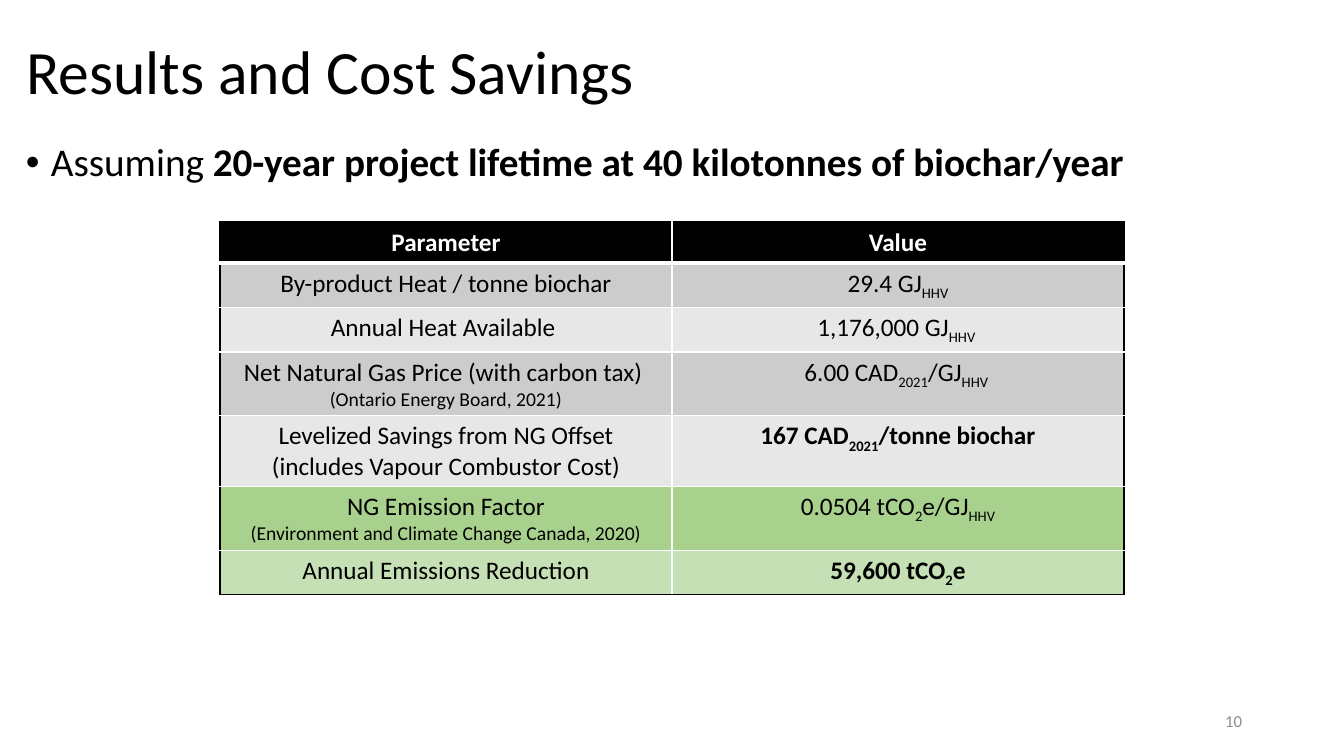
from lxml import etree
from pptx import Presentation
from pptx import util as u
from pptx.dml.color import RGBColor
from pptx.enum import text
from pptx.oxml.ns import qn

SCALE = 914400 / 100.8
FONT = "Calibri"
COLORS = {
    "black": "000000",
    "white": "FFFFFF",
    "gray": "CCCCCC",
    "light_gray": "E7E7E7",
    "green": "A9D18E",
    "light_green": "C5E0B4",
    "number": "8C8C8C",
}
ROWS = [
    ("black", ["Parameter"], "Value", True),
    ("gray", ["By-product Heat / tonne biochar"], "29.4 GJ_HHV", False),
    ("light_gray", ["Annual Heat Available "], "1,176,000 GJ_HHV ", False),
    ("gray", ["Net Natural Gas Price (with carbon tax) ", "(Ontario Energy Board, 2021)"],
     "6.00 CAD_2021_/GJ_HHV ", False),
    ("light_gray", ["Levelized Savings from NG Offset", "(includes Vapour Combustor Cost)"],
     "167 CAD_2021_/tonne biochar", True),
    ("green", ["NG Emission Factor", "(Environment and Climate Change Canada, 2020)"],
     "0.0504 tCO_2_e/GJ_HHV", False),
    ("light_green", ["Annual Emissions Reduction"], "59,600 tCO_2_e", True),
]
CITATIONS = {"(Ontario Energy Board, 2021)", "(Environment and Climate Change Canada, 2020)"}


def px(length):
    return u.Emu(round(length * SCALE))


def box(*lengths):
    return [px(length) for length in lengths]


def style_run(run, size, color="black", bold=False):
    run.font.name = FONT
    run.font.size = u.Pt(size)
    run.font.bold = bold
    run.font.color.rgb = RGBColor.from_string(COLORS[color])


def add_runs(paragraph, marked_text, size, color="black", bold=False):
    for index, part in enumerate(marked_text.split("_")):
        run = paragraph.add_run()
        run.text = part
        style_run(run, size, color, bold)
        if index % 2:
            run._r.get_or_add_rPr().set("baseline", "-25000")


def add_title(slide, title):
    shape = slide.shapes.title
    shape.left, shape.top, shape.width, shape.height = box(16, 2, 1237, 146)
    frame = shape.text_frame
    frame.text = title
    frame.auto_size = text.MSO_AUTO_SIZE.NONE
    frame.vertical_anchor = text.MSO_ANCHOR.MIDDLE
    paragraph = frame.paragraphs[0]
    paragraph.alignment = text.PP_ALIGN.LEFT
    paragraph.line_spacing = 0.9
    style_run(paragraph.runs[0], 44)


def add_text_box(slide, *lengths):
    frame = slide.shapes.add_textbox(*box(*lengths)).text_frame
    frame.word_wrap = True
    return frame


def add_bullet(slide, plain, bold):
    paragraph = add_text_box(slide, 16, 138, 1328, 590).paragraphs[0]
    paragraph.line_spacing = 0.9
    paragraph.space_before = u.Pt(10)
    properties = paragraph._p.get_or_add_pPr()
    properties.set("marL", str(px(25)))
    properties.set("indent", str(px(-25)))
    etree.SubElement(properties, qn("a:buFont"), typeface="Arial")
    etree.SubElement(properties, qn("a:buChar"), char="•")
    add_runs(paragraph, plain, 28)
    add_runs(paragraph, bold, 28, bold=True)


def add_border(cell, side, color, width):
    line = etree.SubElement(cell._tc.get_or_add_tcPr(), qn("a:ln" + side), w=str(u.Pt(width)))
    fill = etree.SubElement(line, qn("a:solidFill"))
    etree.SubElement(fill, qn("a:srgbClr"), val=COLORS[color])


def style_cell(cell, row, column, fill):
    last_row = len(ROWS) - 1
    outer = {"L": column == 0, "R": column == 1, "T": row == 0, "B": row == last_row}
    header_rule = {(0, "B"), (1, "T")}
    for side, is_outer in outer.items():
        add_border(cell, side, "black" if is_outer else "white",
                   3 if (row, side) in header_rule else 1)
    cell.fill.solid()
    cell.fill.fore_color.rgb = RGBColor.from_string(COLORS[fill])


def fill_cell(cell, lines, color, bold):
    frame = cell.text_frame
    for index, line in enumerate(lines):
        paragraph = frame.add_paragraph() if index else frame.paragraphs[0]
        paragraph.alignment = text.PP_ALIGN.CENTER
        add_runs(paragraph, line, 14 if line in CITATIONS else 18, color, bold)


def add_results_table(slide):
    graphic = slide.shapes.add_table(len(ROWS), 2, *box(220, 222, 904, 287))
    table = graphic.table
    for row, (fill, parameter, value, bold) in enumerate(ROWS):
        table.rows[row].height = px(41)
        color = "white" if row == 0 else "black"
        for column, lines in enumerate((parameter, [value])):
            cell = table.cell(row, column)
            style_cell(cell, row, column, fill)
            fill_cell(cell, lines, color, bold and (row == 0 or column == 1))
    graphic.height = px(362)


def add_slide_number(slide, number):
    frame = add_text_box(slide, 950, 701, 302, 40)
    frame.vertical_anchor = text.MSO_ANCHOR.MIDDLE
    frame.text = number
    paragraph = frame.paragraphs[0]
    paragraph.alignment = text.PP_ALIGN.RIGHT
    style_run(paragraph.runs[0], 12, "number")


def main():
    presentation = Presentation()
    presentation.slide_width, presentation.slide_height = box(1344, 756)
    slide = presentation.slides.add_slide(presentation.slide_layouts[5])
    add_title(slide, "Results and Cost Savings")
    add_bullet(slide, "Assuming ", "20-year project lifetime at 40 kilotonnes of biochar/year")
    add_results_table(slide)
    add_slide_number(slide, "10")
    presentation.save("out.pptx")


if __name__ == "__main__":
    main()
